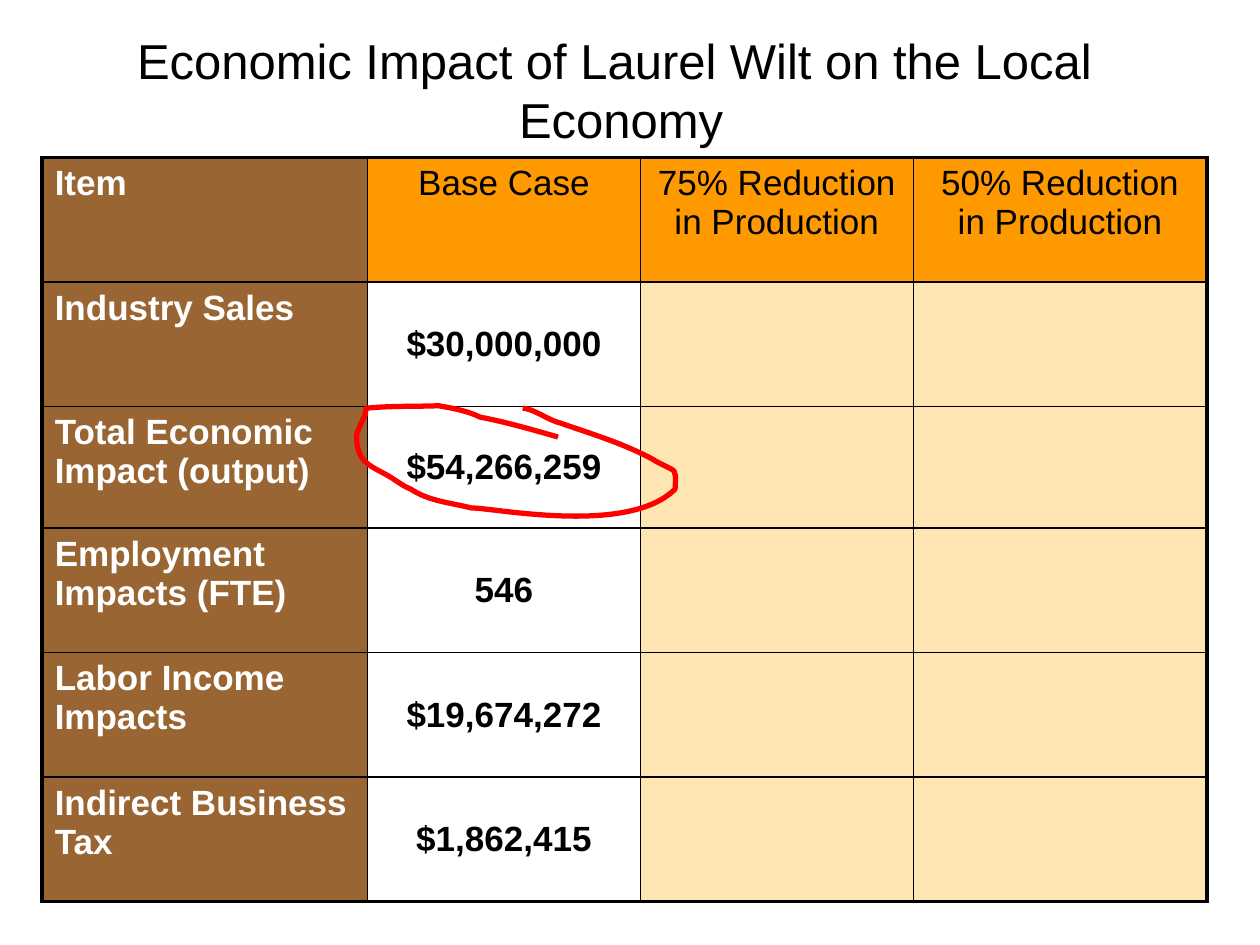
from typing import NamedTuple

from lxml.etree import SubElement
from pptx import Presentation
from pptx.dml.color import RGBColor
from pptx.enum.text import MSO_ANCHOR, PP_ALIGN
from pptx.oxml import parse_xml
from pptx.oxml.ns import nsdecls, qn
from pptx.util import Cm, Pt

FONT = "Arial"
BLACK, WHITE, RED = "000000", "FFFFFF", "FF0000"
BROWN, ORANGE, SAND = "996633", "FF9900", "FFCC66"
INNER_BORDER, OUTER_BORDER = Pt(1), Pt(2.25)

COLUMN_WIDTHS = [6.56, 5.5, 5.5, 5.92]
ROW_HEIGHTS = [2.51, 2.51, 2.45, 2.51, 2.51, 2.51]


class Look(NamedTuple):
    fill: str
    color: str
    bold: bool
    align: PP_ALIGN
    anchor: MSO_ANCHOR
    alpha: int = 100


class Curve(NamedTuple):
    """Cubic segment in centimetres: two control points and an end point."""
    control1: tuple[float, float]
    control2: tuple[float, float]
    end: tuple[float, float]


ITEM = Look(BROWN, WHITE, True, PP_ALIGN.LEFT, MSO_ANCHOR.TOP)
SCENARIO = Look(ORANGE, BLACK, False, PP_ALIGN.CENTER, MSO_ANCHOR.TOP)
BASE_VALUE = Look(WHITE, BLACK, True, PP_ALIGN.CENTER, MSO_ANCHOR.MIDDLE, 50)
OPEN_VALUE = Look(SAND, BLACK, True, PP_ALIGN.CENTER, MSO_ANCHOR.TOP, 50)

IMPACTS = [
    ("Item", "Base Case", "75% Reduction in Production", "50% Reduction in Production"),
    ("Industry Sales", "$30,000,000", "", ""),
    ("Total Economic Impact (output)", "$54,266,259", "", ""),
    ("Employment Impacts (FTE)", "546", "", ""),
    ("Labor Income Impacts", "$19,674,272", "", ""),
    ("Indirect Business Tax", "$1,862,415", "", ""),
]

CIRCLE_START = (11.25, 8.81)
CIRCLE = [
    Curve((10.72, 8.66), (10.21, 8.51), (9.68, 8.41)),
    Curve((9.42, 8.28), (9.12, 8.23), (8.84, 8.18)),
    Curve((8.36, 8.2), (7.87, 8.18), (7.39, 8.23)),
    Curve((7.37, 8.23), (7.37, 8.33), (7.37, 8.36)),
    Curve((7.29, 8.48), (7.19, 8.76), (7.19, 8.76)),
    Curve((7.19, 8.86), (7.19, 8.99), (7.24, 9.12)),
    Curve((7.32, 9.35), (7.57, 9.45), (7.75, 9.55)),
    Curve((7.95, 9.65), (8.08, 9.78), (8.28, 9.86)),
    Curve((8.66, 10.11), (9.07, 10.13), (9.5, 10.24)),
    Curve((9.98, 10.24), (12.67, 10.8), (13.61, 9.86)),
    Curve((13.61, 9.73), (13.64, 9.6), (13.59, 9.5)),
    Curve((13.56, 9.45), (13.23, 9.32), (13.18, 9.27)),
    Curve((12.57, 8.94), (11.96, 8.76), (11.3, 8.53)),
    Curve((11.07, 8.48), (10.74, 8.23), (10.54, 8.23)),
]


def rgb(value: str) -> RGBColor:
    return RGBColor.from_string(value)


def format_text(frame, size: float, color: str, bold: bool, align: PP_ALIGN) -> None:
    for paragraph in frame.paragraphs:
        paragraph.alignment = align
        for run in paragraph.runs:
            run.font.name = FONT
            run.font.size = Pt(size)
            run.font.bold = bold
            run.font.color.rgb = rgb(color)


def add_title(slide) -> None:
    title = slide.shapes.add_textbox(Cm(0), Cm(0.21), Cm(24.77), Cm(3.18))
    frame = title.text_frame
    frame.word_wrap = True
    frame.vertical_anchor = MSO_ANCHOR.MIDDLE
    frame.text = "Economic Impact of Laurel Wilt on the Local\v Economy"
    format_text(frame, 28, BLACK, False, PP_ALIGN.CENTER)


def look_at(row: int, column: int) -> Look:
    if column == 0:
        return ITEM
    if row == 0:
        return SCENARIO
    return BASE_VALUE if column == 1 else OPEN_VALUE


def set_borders(cell, outer_sides: dict[str, bool]) -> None:
    """Put a line on each side, thicker on the table's outer edge."""
    properties = cell._tc.get_or_add_tcPr()
    for index, (side, is_outer) in enumerate(outer_sides.items()):
        width = OUTER_BORDER if is_outer else INNER_BORDER
        properties.insert(index, parse_xml(
            f'<a:ln{side} {nsdecls("a")} w="{int(width)}"><a:solidFill>'
            f'<a:srgbClr val="{BLACK}"/></a:solidFill></a:ln{side}>'))


def fill_cell(cell, look: Look) -> None:
    cell.fill.solid()
    cell.fill.fore_color.rgb = rgb(look.fill)
    if look.alpha < 100:
        color = cell._tc.tcPr.find(f"{qn('a:solidFill')}/{qn('a:srgbClr')}")
        SubElement(color, qn("a:alpha")).set("val", str(look.alpha * 1000))


def add_impact_table(slide) -> None:
    last_row, last_column = len(ROW_HEIGHTS) - 1, len(COLUMN_WIDTHS) - 1
    table = slide.shapes.add_table(
        len(ROW_HEIGHTS), len(COLUMN_WIDTHS), Cm(0.85), Cm(3.18),
        Cm(sum(COLUMN_WIDTHS)), Cm(sum(ROW_HEIGHTS))).table
    table.first_row = table.horz_banding = False
    for column, width in zip(table.columns, COLUMN_WIDTHS):
        column.width = Cm(width)
    for row, height in zip(table.rows, ROW_HEIGHTS):
        row.height = Cm(height)
    for r, entries in enumerate(IMPACTS):
        for c, entry in enumerate(entries):
            cell, look = table.cell(r, c), look_at(r, c)
            cell.vertical_anchor = look.anchor
            if entry:
                cell.text_frame.text = entry
                format_text(cell.text_frame, 20, look.color, look.bold, look.align)
            fill_cell(cell, look)
            set_borders(cell, {"L": c == 0, "R": c == last_column,
                               "T": r == 0, "B": r == last_row})


def bend_lines(shape) -> None:
    """Turn each three straight segments into one cubic curve."""
    lines = list(shape._element.iter(qn("a:lnTo")))
    for first in range(0, len(lines), 3):
        bezier = parse_xml(f'<a:cubicBezTo {nsdecls("a")}/>')
        lines[first].addprevious(bezier)
        for line in lines[first:first + 3]:
            bezier.append(line[0])
            line.getparent().remove(line)


def add_hand_circle(slide) -> None:
    start_x, start_y = CIRCLE_START
    outline = slide.shapes.build_freeform(Cm(start_x), Cm(start_y))
    outline.add_line_segments(
        [(Cm(x), Cm(y)) for curve in CIRCLE for x, y in curve], close=False)
    circle = outline.convert_to_shape()
    bend_lines(circle)
    circle.shadow.inherit = False
    circle.fill.background()
    circle.line.color.rgb = rgb(RED)
    circle.line.width = Pt(3)


def main() -> None:
    presentation = Presentation()
    presentation.slide_width, presentation.slide_height = Cm(25.4), Cm(19.05)
    slide = presentation.slides.add_slide(presentation.slide_layouts[6])
    add_title(slide)
    add_impact_table(slide)
    add_hand_circle(slide)
    presentation.save("out.pptx")


if __name__ == "__main__":
    main()
